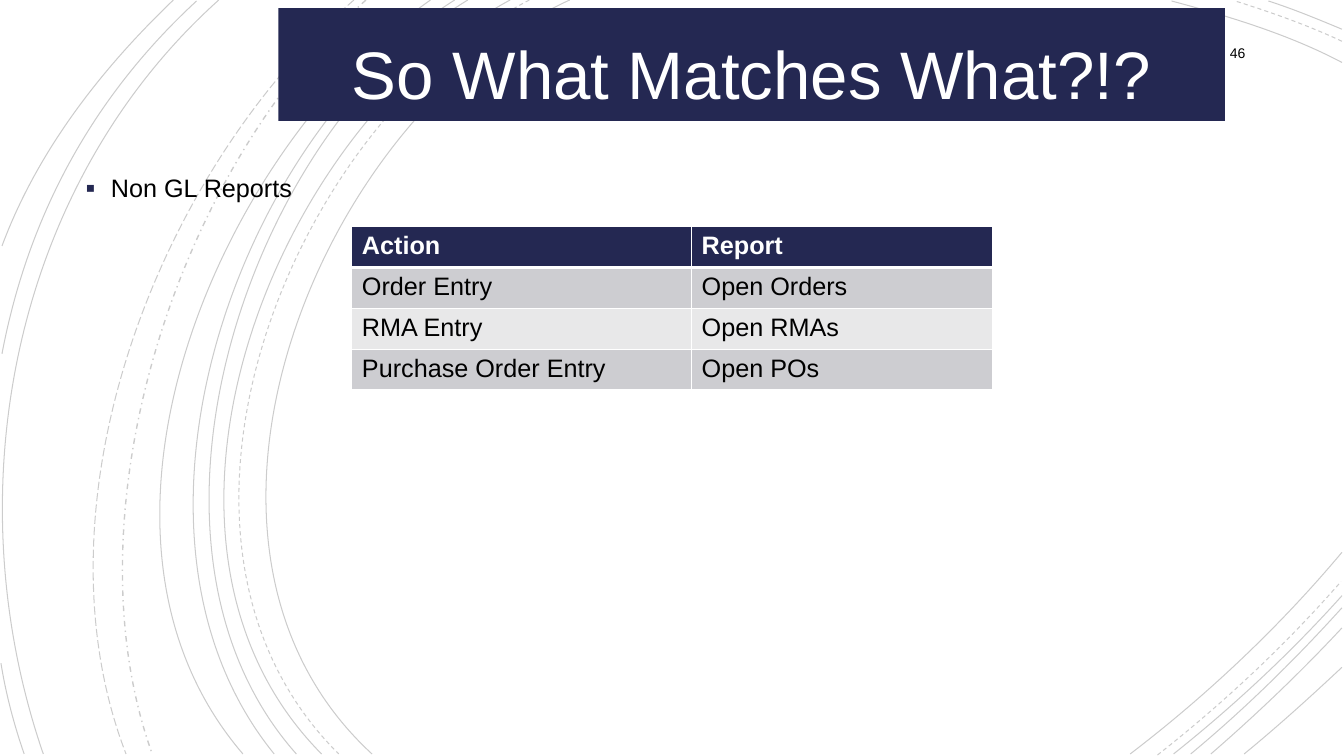
"""Build the slide that pairs entry actions with their non GL reports."""
from dataclasses import dataclass

from lxml import etree
from pptx import Presentation
from pptx import util as u
from pptx.dml.color import RGBColor
from pptx.enum import dml, text
from pptx.oxml import parse_xml
from pptx.oxml.ns import nsdecls, qn


@dataclass
class Theme:
    font: str = "Arial"
    navy: str = "242852"
    white: str = "FFFFFF"
    black: str = "000000"
    band_dark: str = "CDCDD1"
    band_light: str = "E8E8E9"
    title: int = 48
    content: int = 18
    number: int = 10


theme = Theme()
COLUMNS, ROWS = 133.3, 75


def grid(*cells):
    return [u.Inches(cell / 10) for cell in cells]


def write(paragraph, words, size, color, bold=False):
    run = paragraph.add_run()
    run.text = words
    run.font.name = theme.font
    run.font.size = u.Pt(size)
    run.font.bold = bold
    run.font.color.rgb = RGBColor.from_string(color)


deck = Presentation()
deck.slide_width, deck.slide_height = grid(COLUMNS, ROWS)
slide = deck.slides.add_slide(deck.slide_layouts[1])
title, reports = slide.placeholders

solid, dash = dml.MSO_LINE.SOLID, dml.MSO_LINE.DASH
dash_dot, long_dash = dml.MSO_LINE.DASH_DOT, dml.MSO_LINE.LONG_DASH
arcs = [
    ((56.5, 0), (31.5, 11.5), (14.3, 54), (36.9, 74.8), solid),
    ((133.1, 6.2), (127.8, 3.4), (121.8, 1.6), (116.2, 0.1), solid),
    ((112.1, 74.8), (119.7, 69), (126.9, 62.2), (133.1, 54.8), solid),
    ((52.5, 0), (28.5, 12.5), (12.3, 53.7), (33.6, 74.8), dash),
    ((133.1, 4.1), (129.7, 2.5), (126, 1.2), (122.5, 0.1), dash),
    ((114.8, 74.9), (121.3, 69.8), (127.5, 64), (133, 57.7), dash),
    ((50.6, 0), (27, 12.7), (11, 53.7), (31.9, 74.8), solid),
    ((133.1, 2.9), (130.7, 1.9), (128.3, 0.9), (125.8, 0.1), solid),
    ((116.4, 74.8), (122.3, 70.1), (128, 64.8), (133.1, 59.1), solid),
    ((46.4, 0), (24.4, 13.3), (11, 54.1), (29.4, 74.8), solid),
    ((118.1, 74.8), (123.4, 70.4), (128.4, 65.5), (133.1, 60.3), solid),
    ((45.1, 0), (23.1, 13.8), (9.7, 53.3), (27.2, 74.8), solid),
    ((120.1, 74.8), (124.6, 70.9), (129, 66.7), (133.1, 62.3), solid),
    ((42.7, 0), (21.7, 14.7), (5.3, 52.9), (24.1, 74.8), solid),
    ((123.4, 74.8), (126.7, 72.1), (129.9, 69.2), (133.1, 66.2), solid),
    ((36.3, 0), (17.6, 16.6), (6.5, 50.9), (15.1, 74.8), dash_dot),
    ((35.1, 0), (15.7, 16.9), (2.9, 49.9), (12.5, 74.8), long_dash),
    ((21.7, 0), (1.1, 18.5), (-4.6, 49), (4.3, 74.8), solid),
    ((19.5, 0.1), (9.2, 9.6), (2.8, 21.4), (0.2, 35.1), solid),
    ((0.1, 65.8), (0.6, 68.9), (1.4, 71.9), (2.4, 74.8), solid),
    ((17.2, 0), (10, 6.9), (3.7, 15), (0.2, 24.4), solid),
]
backdrop = slide.shapes.add_group_shape()
for start, *controls, stroke in arcs:
    outline = backdrop.shapes.build_freeform(*grid(*start))
    outline.add_line_segments([grid(*point) for point in controls], close=False)
    arc = outline.convert_to_shape()
    segments = list(arc._element.iter(qn("a:lnTo")))
    curve = etree.SubElement(segments[0].getparent(), qn("a:cubicBezTo"))
    for segment in segments:
        curve.append(segment[0])
        segment.getparent().remove(segment)
    arc.shadow.inherit = False
    arc.fill.background()
    arc.line.color.rgb = RGBColor.from_string(theme.black)
    arc.line.width = u.Pt(1 if stroke == dash_dot else 0.75)
    arc.line.dash_style = stroke
    ink = arc.line._get_or_add_ln().find(".//" + qn("a:srgbClr"))
    etree.SubElement(ink, qn("a:alpha"), val="20000")
slide.shapes._spTree.insert(2, backdrop._element)

title.left, title.top, title.width, title.height = grid(27.6, 0.8, 93.9, 11.2)
title.fill.solid()
title.fill.fore_color.rgb = RGBColor.from_string(theme.navy)
title.text_frame.auto_size = text.MSO_AUTO_SIZE.NONE
title.text_frame.vertical_anchor = text.MSO_ANCHOR.MIDDLE
heading = title.text_frame.paragraphs[0]
heading.alignment = text.PP_ALIGN.CENTER
heading.line_spacing = 1.2
write(heading, "So What Matches What?!?", theme.title, theme.white)

number = slide.shapes.add_textbox(*grid(114.5, 3.5, 10, 3.5)).text_frame
number.word_wrap = True
number.vertical_anchor = text.MSO_ANCHOR.MIDDLE
number.paragraphs[0].alignment = text.PP_ALIGN.RIGHT
write(number.paragraphs[0], "46", theme.number, theme.black)

reports.left, reports.top, reports.width, reports.height = grid(7.5, 16, 125.8, 55.6)
reports.text_frame.auto_size = text.MSO_AUTO_SIZE.NONE
bullet = reports.text_frame.paragraphs[0]
layout = bullet._p.get_or_add_pPr()
layout.set("marL", str(u.Inches(0.25)))
layout.set("indent", str(-u.Inches(0.25)))
for mark in (f'<a:buClr {nsdecls("a")}><a:srgbClr val="{theme.navy}"/></a:buClr>',
             f'<a:buSzPct {nsdecls("a")} val="110000"/>',
             f'<a:buFont {nsdecls("a")} typeface="{theme.font}"/>',
             f'<a:buChar {nsdecls("a")} char="▪"/>'):
    layout.append(parse_xml(mark))
bullet.line_spacing = 1.2
bullet.space_before = u.Pt(0)
write(bullet, "Non GL Reports", theme.content, theme.black)

matches = [("Action", "Report"), ("Order Entry", "Open Orders"),
           ("RMA Entry", "Open RMAs"), ("Purchase Order Entry", "Open POs")]
table = slide.shapes.add_table(len(matches), 2, *grid(34.9, 22.5, 63.5, 16.2)).table
table.columns[0].width, table.columns[1].width = grid(33.7, 29.8)
for r, pair in enumerate(matches):
    header = r == 0
    band = theme.navy if header else theme.band_dark if r % 2 else theme.band_light
    for c, words in enumerate(pair):
        cell = table.cell(r, c)
        edges = {"lnL": 1, "lnR": 1, "lnT": 3 if r == 1 else 1, "lnB": 3 if header else 1}
        for edge, points in edges.items():
            cell._tc.get_or_add_tcPr().append(parse_xml(
                f'<a:{edge} {nsdecls("a")} w="{u.Pt(points)}"><a:solidFill>'
                f'<a:srgbClr val="{theme.white}"/></a:solidFill></a:{edge}>'))
        cell.fill.solid()
        cell.fill.fore_color.rgb = RGBColor.from_string(band)
        write(cell.text_frame.paragraphs[0], words, theme.content,
              theme.white if header else theme.black, bold=header)

deck.save("out.pptx")
